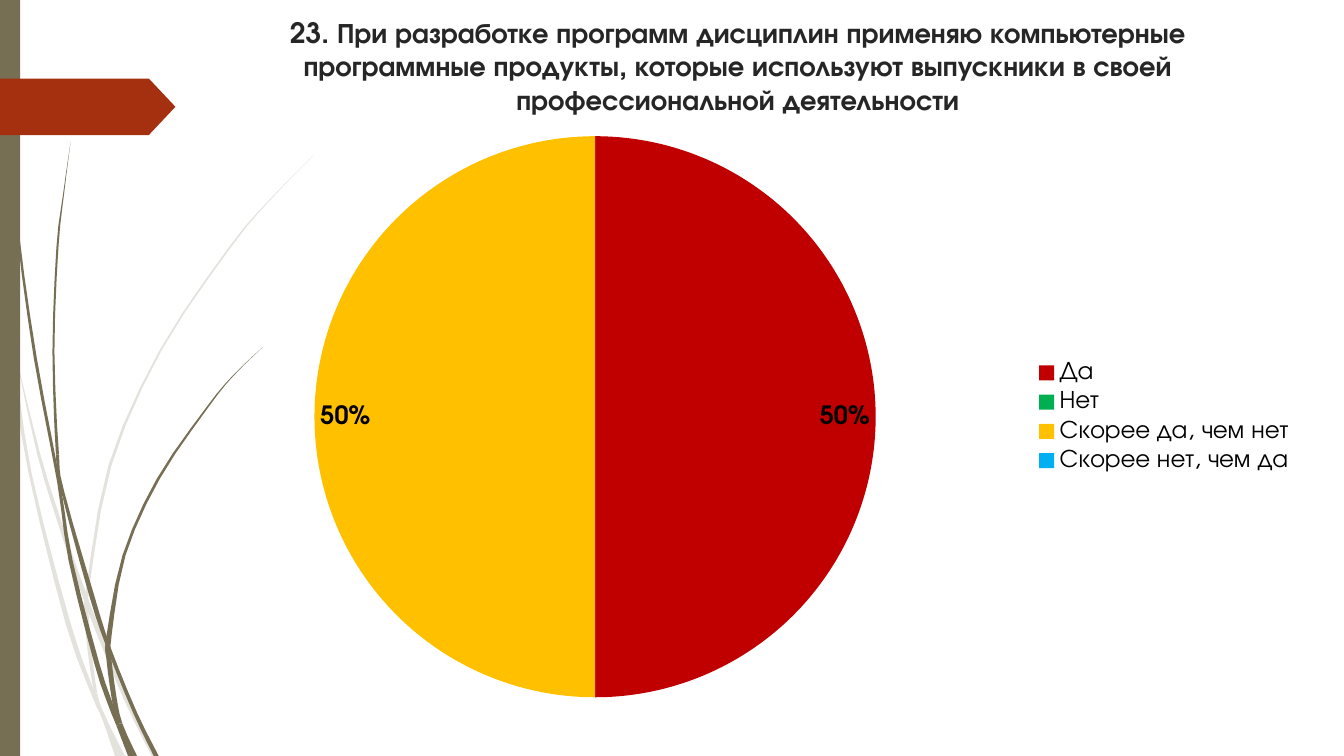
from lxml.etree import SubElement
from pptx import Presentation
from pptx.chart.data import CategoryChartData
from pptx.dml.color import RGBColor
from pptx.enum.chart import XL_CHART_TYPE, XL_LABEL_POSITION, XL_LEGEND_POSITION
from pptx.enum.shapes import MSO_SHAPE
from pptx.enum.text import MSO_ANCHOR, PP_ALIGN
from pptx.oxml.ns import qn
from pptx.util import Inches, Pt

W, H = 13.33, 7.5
FONT = "TeX Gyre Adventor"
OLIVE, PALE, RUST = "766F54", "E4E2DD", "A53010"
UNITS = 1000  # outline units per inch
STEPS = 3  # curve steps between two blade points
TITLE = ("23. При разработке программ дисциплин применяю компьютерные "
         "программные продукты, которые используют выпускники в своей "
         "профессиональной деятельности")
ANSWERS = [("Да", 50, "C00000"), ("Нет", 0, "00B050"),
           ("Скорее да, чем нет", 50, "FFC000"), ("Скорее нет, чем да", 0, "00B0F0")]

# Grass blades: colour, joints between pieces, points along the blade as (x, y, width) in inches
BLADES = [
    (PALE, (0, 1, 5, 6),
     [(0.02, 2.9, 0.02), (0.13, 3.6, 0.04), (0.3, 4.7, 0.03), (0.68, 6.2, 0.05),
      (0.94, 6.92, 0.04), (1.03, 7.12, 0.04), (1.17, 7.5, 0.06)]),
    (PALE, (0, 3, 5),
     [(0.14, 3.45, 0), (0.38, 4.49, 0.03), (0.6, 5.21, 0.04), (0.88, 6.02, 0.05),
      (1.25, 6.93, 0.05), (1.53, 7.5, 0.05)]),
    (PALE, (0, 5, 6, 8, 9, 10),
     [(3.12, 1.53, 0), (2.68, 1.98, 0.01), (2.29, 2.44, 0.02), (1.59, 3.48, 0.02),
      (1.09, 4.62, 0.03), (0.87, 5.84, 0.03), (0.86, 6.1, 0.04), (0.89, 6.46, 0.04),
      (0.95, 6.88, 0.03), (1.03, 7.12, 0.04), (1.21, 7.5, 0.06)]),
    (OLIVE, (0, 4, 8, 9),
     [(0.03, 0, 0), (0.08, 1.1, 0.01), (0.18, 2.32, 0.02), (0.35, 3.55, 0.03),
      (0.58, 4.77, 0.03), (0.7, 5.56, 0.04), (0.96, 6.58, 0.05), (1.1, 7.0, 0.05),
      (1.17, 7.2, 0.03), (1.29, 7.5, 0.04)]),
    (OLIVE, (0, 4, 5, 7, 9),
     [(0.7, 1.41, 0), (0.63, 1.93, 0.01), (0.57, 2.45, 0.02), (0.53, 3.49, 0.02),
      (0.57, 4.51, 0.03), (0.62, 4.87, 0.03), (0.91, 5.91, 0.05), (1.08, 6.43, 0.04),
      (1.34, 7.07, 0.04), (1.55, 7.5, 0.05)]),
    (OLIVE, (0, 5, 6, 8, 9),
     [(2.61, 3.44, 0), (2.31, 3.73, 0.01), (2.05, 4.05, 0.02), (1.57, 4.75, 0.03),
      (1.23, 5.51, 0.03), (1.08, 6.32, 0.05), (1.08, 6.53, 0.05), (1.13, 6.91, 0.05),
      (1.19, 7.18, 0.05), (1.33, 7.5, 0.06)]),
]


def color(value):
    return RGBColor.from_string(value)


def set_font(font, **values):
    for name, value in {"name": FONT, **values}.items():
        setattr(font, name, value)


def paint(sp, fill):
    sp.shadow.inherit = False
    sp.fill.solid()
    sp.fill.fore_color.rgb = color(fill)
    sp.line.fill.background()


def smooth(points):
    """Catmull-Rom curve through the points."""
    ends = [points[0], *points, points[-1]]
    curve = []
    for a, b, c, d in zip(ends, ends[1:], ends[2:], ends[3:]):
        for t in (i / STEPS for i in range(STEPS)):
            curve.append(tuple(
                (2 * q + (r - p) * t + (2 * p - 5 * q + 4 * r - s) * t ** 2
                 + (3 * q - p - 3 * r + s) * t ** 3) / 2
                for p, q, r, s in zip(a, b, c, d)))
    return curve + [points[-1]]


def add_blade(s, fill, joints, points):
    curve = smooth(points)
    for start, end in zip(joints, joints[1:]):
        piece = curve[start * STEPS:end * STEPS + 1]
        outline = [(x - w / 2, y) for x, y, w in piece]
        outline += [(x + w / 2, y) for x, y, w in reversed(piece)]
        outline = [(x * UNITS, y * UNITS) for x, y in outline]
        builder = s.shapes.build_freeform(*outline[0], scale=Inches(1) / UNITS)
        builder.add_line_segments(outline[1:])
        paint(builder.convert_to_shape(), fill)


def add_decoration(s):
    for blade in BLADES:
        add_blade(s, *blade)
    # Side bar and pointer
    for kind, fill, top, width, height in (
            (MSO_SHAPE.RECTANGLE, OLIVE, 0, 0.2, H),
            (MSO_SHAPE.PENTAGON, RUST, 0.78, 1.74, 0.56)):
        sp = s.shapes.add_shape(kind, 0, Inches(top), Inches(width), Inches(height))
        paint(sp, fill)
        if kind == MSO_SHAPE.PENTAGON:
            sp.adjustments[0] = 0.47


def add_title(s, box):
    tf = s.shapes.add_textbox(*map(Inches, box)).text_frame
    for name, value in {"word_wrap": True, "vertical_anchor": MSO_ANCHOR.TOP,
                        "margin_left": Inches(0.4), "margin_right": Inches(0.6)}.items():
        setattr(tf, name, value)
    p = tf.paragraphs[0]
    p.alignment = PP_ALIGN.CENTER
    r = p.add_run()
    r.text = TITLE
    set_font(r.font, size=Pt(20), bold=True)
    r.font.color.rgb = color("262626")


def add_pie(s, box):
    names, values, fills = zip(*ANSWERS)
    data = CategoryChartData()
    data.categories = names
    data.add_series("Series 1", values)
    chart = s.shapes.add_chart(XL_CHART_TYPE.PIE, *map(Inches, box), data).chart
    chart.has_title = False
    set_font(chart.font, size=Pt(18))
    chart.font.color.rgb = color("000000")
    chart.has_legend = True
    chart.legend.position = XL_LEGEND_POSITION.RIGHT
    chart.legend.include_in_layout = False

    # Slices and percent labels, empty shares unlabelled
    plot = chart.plots[0]
    plot.vary_by_categories = True
    for i, fill in enumerate(fills):
        point = plot.series[0].points[i].format
        point.fill.solid()
        point.fill.fore_color.rgb = color(fill)
        point.line.fill.background()
    plot.has_data_labels = True
    labels = plot.data_labels
    for name, value in {"show_percentage": True, "show_value": False,
                        "number_format": "0%;;;", "number_format_is_linked": False,
                        "position": XL_LABEL_POSITION.INSIDE_END}.items():
        setattr(labels, name, value)
    set_font(labels.font, size=Pt(18), bold=True)
    labels.font.color.rgb = color("000000")

    # Plot area as shares of the chart
    area = chart._chartSpace.chart.plotArea
    for old in area.findall(qn("c:layout")):
        area.remove(old)
    layout = SubElement(area, qn("c:layout"))
    area.insert(0, layout)
    manual = SubElement(layout, qn("c:manualLayout"))
    for tag, value in (("layoutTarget", "inner"), ("xMode", "edge"), ("yMode", "edge"),
                       ("x", 0.137), ("y", 0.024), ("w", 0.489), ("h", 0.952)):
        SubElement(manual, qn("c:" + tag)).set("val", str(value))


def main():
    prs = Presentation()
    prs.slide_width, prs.slide_height = Inches(W), Inches(H)
    s = prs.slides.add_slide(prs.slide_layouts[6])
    add_decoration(s)
    add_title(s, (0.14 * W, 0.1, 0.833 * W, 1.39))
    add_pie(s, (0.117 * W, 1.21, 0.854 * W, 0.78 * H))
    prs.save("out.pptx")


if __name__ == "__main__":
    main()
